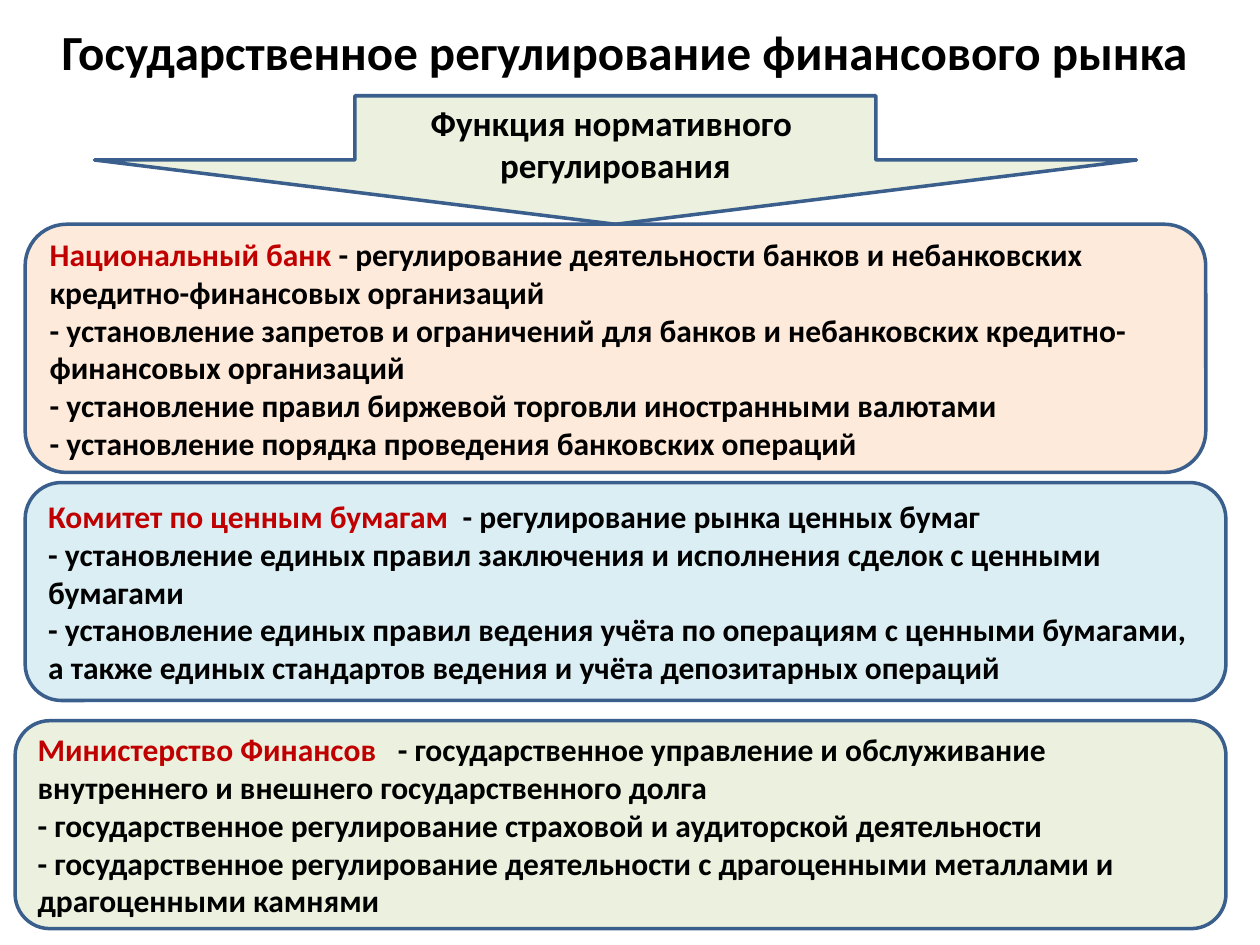
"""Build a slide on state regulation of the financial market."""
import pptx
import pptx.util
import pptx.dml.color
import pptx.enum.shapes
import pptx.enum.text

Inches = pptx.util.Inches
Pt = pptx.util.Pt
RGBColor = pptx.dml.color.RGBColor
Kind = pptx.enum.shapes.MSO_SHAPE
Align = pptx.enum.text.PP_ALIGN
Anchor = pptx.enum.text.MSO_ANCHOR

BLACK = RGBColor(0x00, 0x00, 0x00)
RED = RGBColor(0xC0, 0x00, 0x00)
BLUE = RGBColor(0x3A, 0x5F, 0x8C)
GREEN = RGBColor(0xEB, 0xF1, 0xDE)
PEACH = RGBColor(0xFD, 0xEA, 0xDA)
AQUA = RGBColor(0xDB, 0xEE, 0xF4)


def add_run(para, text, size, color=BLACK):
    run = para.add_run()
    run.text = text
    run.font.name = "Calibri"
    run.font.size = Pt(size)
    run.font.bold = True
    run.font.color.rgb = color


def add_box(kind, place, fill):
    box = slide.shapes.add_shape(kind, *map(Inches, place))
    box.shadow.inherit = False
    box.fill.solid()
    box.fill.fore_color.rgb = fill
    box.line.color.rgb = BLUE
    box.line.width = Pt(2)
    frame = box.text_frame
    frame.word_wrap = True
    frame.vertical_anchor = Anchor.MIDDLE
    return frame


deck = pptx.Presentation()
deck.slide_width = Inches(10)
deck.slide_height = Inches(7.5)
slide = deck.slides.add_slide(deck.slide_layouts[6])

title = slide.shapes.add_textbox(
    Inches(0.27), Inches(0.13), Inches(9.37), Inches(0.55)).text_frame
title.word_wrap = True
title.vertical_anchor = Anchor.MIDDLE
para = title.paragraphs[0]
para.alignment = Align.CENTER
add_run(para, "Государственное регулирование финансового рынка", 28)

arrow = add_box(Kind.DOWN_ARROW, (0.75, 0.76, 8.27, 1.02), GREEN)
for para, text in (
    (arrow.paragraphs[0], "Функция нормативного "),
    (arrow.add_paragraph(), "регулирования"),
):
    para.alignment = Align.CENTER
    add_run(para, text, 20)

bodies = [
    ((0.2, 1.78, 9.37, 1.97), PEACH, "Национальный банк", [
        " - регулирование деятельности банков и небанковских кредитно-финансовых организаций",
        "- установление запретов и ограничений для банков и небанковских кредитно-финансовых организаций",
        "- установление правил биржевой торговли иностранными валютами",
        "- установление порядка проведения банковских операций",
    ]),
    ((0.2, 3.83, 9.53, 1.73), AQUA, "Комитет по ценным бумагам", [
        "  - регулирование рынка ценных бумаг",
        "- установление единых правил заключения и исполнения сделок с ценными бумагами",
        "- установление единых правил ведения учёта по операциям с ценными бумагами, "
        "а также единых стандартов ведения и учёта депозитарных операций",
    ]),
    ((0.12, 5.72, 9.61, 1.65), GREEN, "Министерство Финансов ", [
        "  - государственное управление и обслуживание внутреннего и внешнего государственного долга",
        "- государственное регулирование страховой и аудиторской деятельности",
        "- государственное регулирование деятельности с драгоценными металлами и драгоценными камнями",
    ]),
]
for place, fill, name, duties in bodies:
    para = add_box(Kind.ROUNDED_RECTANGLE, place, fill).paragraphs[0]
    para.alignment = Align.LEFT
    add_run(para, name, 18, RED)
    for index, duty in enumerate(duties):
        if index:
            para.add_line_break()
        add_run(para, duty, 18)

deck.save("out.pptx")
